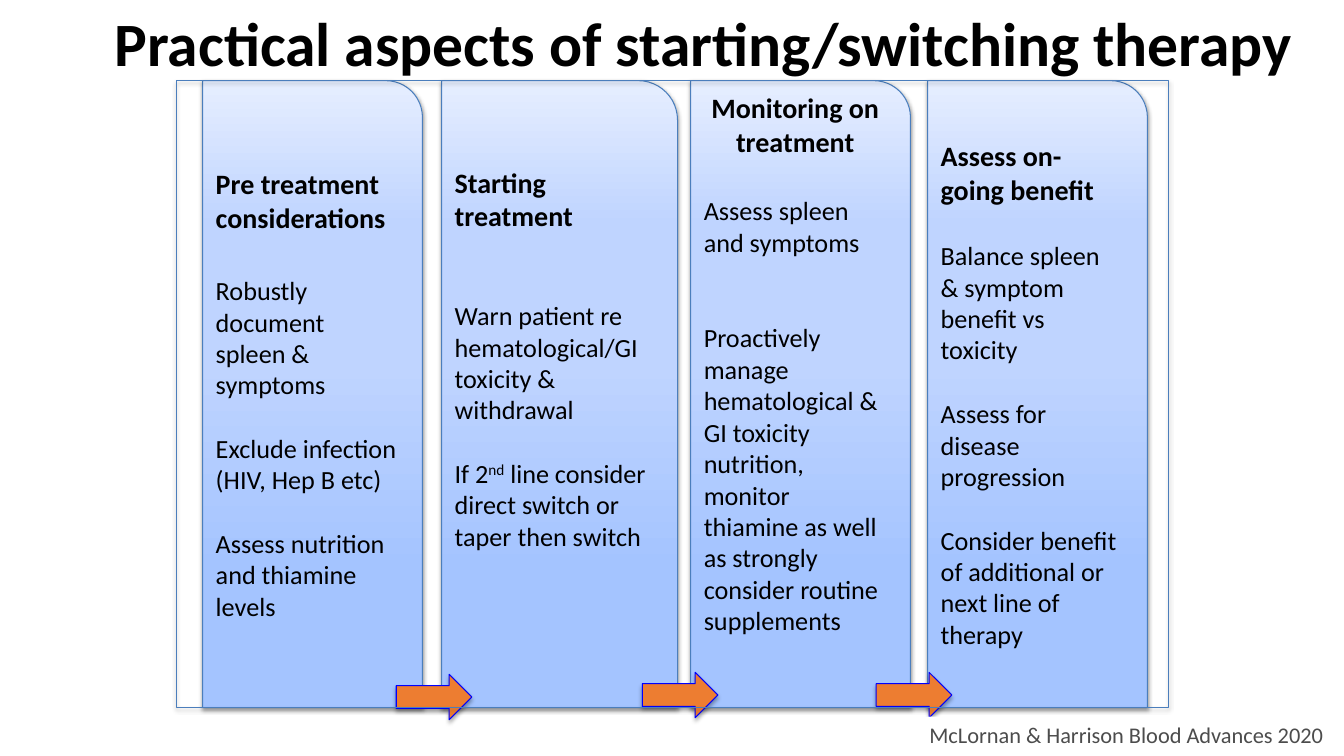
from lxml.etree import SubElement
from pptx import Presentation
from pptx.dml.color import RGBColor
from pptx.enum.shapes import MSO_SHAPE
from pptx.enum.text import MSO_ANCHOR, PP_ALIGN
from pptx.oxml import parse_xml
from pptx.oxml.ns import nsdecls, qn
from pptx.util import Inches, Pt

BLACK = RGBColor(0x00, 0x00, 0x00)
GREY = RGBColor(0x4C, 0x4C, 0x4C)
WHITE = RGBColor(0xFF, 0xFF, 0xFF)
ORANGE = RGBColor(0xED, 0x7D, 0x31)
ARROW_BLUE = RGBColor(0x00, 0x00, 0xFF)
STEEL_BLUE = RGBColor(0x4B, 0x7E, 0xBC)
PANEL_STOPS = [
    (22, RGBColor(0xA4, 0xC4, 0xFF)),
    (55, RGBColor(0xBF, 0xD4, 0xFF)),
    (77, RGBColor(0xBF, 0xD4, 0xFF)),
    (100, RGBColor(0xE6, 0xEE, 0xFF)),
]

TOP, HEIGHT = 0.8, 6.22
BODY = 18.7

# left, width, bottom inset, heading alignment, heading, [(space before, text)]
PANELS = [
    (2.01, 2.18, 0.07, PP_ALIGN.LEFT, "Pre treatment considerations", [
        (29, "Robustly document spleen & symptoms"),
        (23, "Exclude infection (HIV, Hep B etc)"),
        (23, "Assess nutrition and thiamine levels")]),
    (4.38, 2.34, 0.78, PP_ALIGN.LEFT, "Starting treatment", [
        (48, "Warn patient re hematological/GI toxicity & withdrawal"),
        (23, "If 2^nd^ line consider direct switch or taper then switch")]),
    (6.85, 2.18, 0.68, PP_ALIGN.CENTER, "Monitoring on treatment", [
        (26, "Assess spleen and symptoms"),
        (46, "Proactively manage hematological & GI toxicity nutrition, "
             "monitor thiamine as well as strongly consider routine supplements")]),
    (9.2, 2.18, 0.07, PP_ALIGN.LEFT, "Assess on-going benefit", [
        (24, "Balance spleen & symptom benefit vs toxicity"),
        (23, "Assess for disease progression"),
        (23, "Consider benefit of additional or next line of therapy")]),
]
ARROWS = [(3.93, 6.69), (6.37, 6.67), (8.69, 6.67)]


def write(p, text, size, color=BLACK, bold=False, align=PP_ALIGN.LEFT, before=0):
    """Fill a paragraph; text between ^ marks is superscript."""
    p.alignment = align
    if before:
        p.space_before = Pt(before)
    for i, part in enumerate(text.split("^")):
        r = p.add_run()
        r.text = part
        r.font.name = "Calibri"
        r.font.size = Pt(size)
        r.font.bold = bold
        r.font.color.rgb = color
        if i % 2:
            r.font._element.set("baseline", "30000")


def add_outlined(kind, left, top, width, height, line, alpha=35, dist=1.8):
    """Add a shape with a thin outline and a soft shadow below it."""
    sp = s.shapes.add_shape(kind, Inches(left), Inches(top), Inches(width), Inches(height))
    sp.line.color.rgb = line
    sp.line.width = Pt(0.75)
    sp.shadow.inherit = False
    effects = sp._element.spPr.find(qn("a:effectLst"))
    shadow = SubElement(effects, qn("a:outerShdw"), blurRad=str(Pt(3.1)),
                        dist=str(Pt(dist)), dir="5400000", rotWithShape="0")
    color = SubElement(shadow, qn("a:srgbClr"), val=str(BLACK))
    SubElement(color, qn("a:alpha"), val=str(alpha * 1000))
    return sp


prs = Presentation()
prs.slide_width, prs.slide_height = Inches(13.33), Inches(7.5)
s = prs.slides.add_slide(prs.slide_layouts[6])

stops = "".join(f'<a:gs pos="{pos * 1000}"><a:srgbClr val="{color}"/></a:gs>'
                for pos, color in PANEL_STOPS)
for left, width, bottom, align, heading, items in PANELS:
    sp = add_outlined(MSO_SHAPE.ROUND_1_RECTANGLE, left, TOP, width, HEIGHT,
                      STEEL_BLUE, alpha=38, dist=1.6)
    gradient = parse_xml(f'<a:gradFill {nsdecls("a")} rotWithShape="1"><a:gsLst>{stops}'
                         '</a:gsLst><a:lin ang="16200000" scaled="0"/></a:gradFill>')
    sp._element.spPr.find(qn("a:prstGeom")).addnext(gradient)
    tf = sp.text_frame
    tf.word_wrap = True
    tf.vertical_anchor = MSO_ANCHOR.MIDDLE
    tf.margin_left = tf.margin_right = Inches(0.13)
    tf.margin_top, tf.margin_bottom = Inches(0.07), Inches(bottom)
    write(tf.paragraphs[0], heading, 20, bold=True, align=align)
    for before, text in items:
        write(tf.add_paragraph(), text, BODY, before=before)

for left, top in ARROWS:
    sp = add_outlined(MSO_SHAPE.RIGHT_ARROW, left, top, 0.75, 0.45, ARROW_BLUE)
    sp.fill.solid()
    sp.fill.fore_color.rgb = ORANGE

frame = add_outlined(MSO_SHAPE.RECTANGLE, 1.75, TOP, 9.84, HEIGHT, STEEL_BLUE)
frame.fill.background()

title = s.shapes.add_textbox(Inches(0.32), Inches(-0.31), Inches(13.33), Inches(1.45))
tf = title.text_frame
tf.word_wrap = True
tf.vertical_anchor = MSO_ANCHOR.MIDDLE
tf.margin_left = tf.margin_right = Inches(0.13)
tf.margin_top = tf.margin_bottom = Inches(0.07)
write(tf.paragraphs[0], "Practical aspects of starting/switching therapy", 44,
      bold=True, align=PP_ALIGN.CENTER)

citation = s.shapes.add_textbox(Inches(9.12), Inches(7.11), Inches(4.56), Inches(0.37))
citation.fill.solid()
citation.fill.fore_color.rgb = WHITE
citation.text_frame.word_wrap = True
write(citation.text_frame.paragraphs[0], "McLornan & Harrison Blood Advances 2020", 16, color=GREY)

prs.save("out.pptx")
